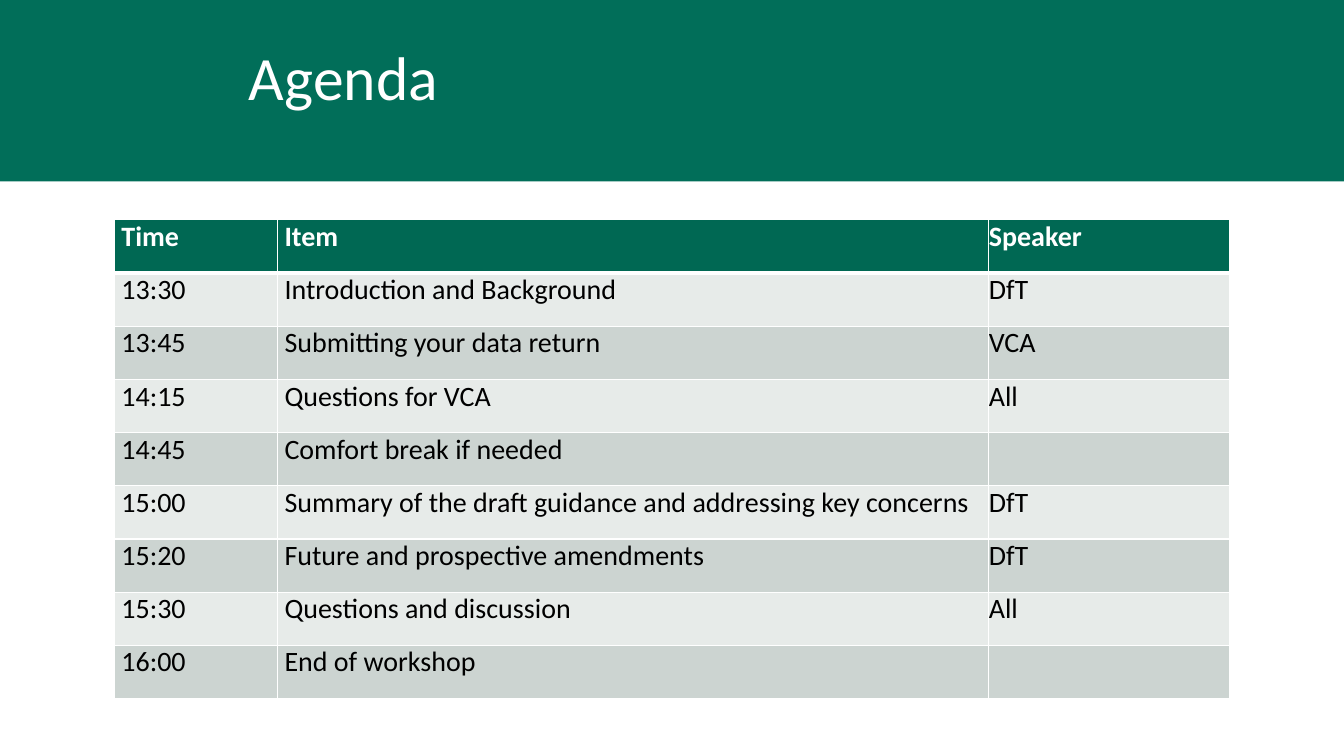
from lxml.etree import SubElement
from pptx import Presentation
from pptx.dml.color import RGBColor
from pptx.enum.shapes import MSO_SHAPE
from pptx.enum.text import MSO_ANCHOR
from pptx.oxml.ns import qn
from pptx.util import Cm, Pt

HEAD = "Agenda"
ROWS = [
    ("Time", "Item", "Speaker"),
    ("13:30", "Introduction and Background", "DfT"),
    ("13:45", "Submitting your data return", "VCA"),
    ("14:15", "Questions for VCA", "All"),
    ("14:45", "Comfort break if needed", ""),
    ("15:00", "Summary of the draft guidance and addressing key concerns", "DfT"),
    ("15:20", "Future and prospective amendments", "DfT"),
    ("15:30", "Questions and discussion", "All"),
    ("16:00", "End of workshop", ""),
]
WIDTHS = [4.11, 17.93, 6.07]
PADS = [0.18, 0.18, 0]
ROW_H = 1.34
FONT, WHITE, BLACK = "Calibri", "FFFFFF", "000000"
BAND, TOP, LIGHT, DARK = "016E59", "006853", "E7EBE9", "CCD4D1"


def paint(fill, color):
    fill.solid()
    fill.fore_color.rgb = RGBColor.from_string(color)


def style(para, size, color, bold=False):
    font = para.font
    font.name, font.size, font.bold = FONT, Pt(size), bold
    font.color.rgb = RGBColor.from_string(color)


def edge(cell, row):
    """Draw white cell borders, thicker below the header row."""
    props = cell._tc.get_or_add_tcPr()
    for i, side in enumerate(("lnL", "lnR", "lnT", "lnB")):
        thick = (row, side) in ((0, "lnB"), (1, "lnT"))
        line = props.makeelement(qn("a:" + side), {"w": str(Pt(3 if thick else 1))})
        fill = SubElement(line, qn("a:solidFill"))
        SubElement(fill, qn("a:srgbClr"), val=WHITE)
        props.insert(i, line)


def add_band(slide, width):
    band = slide.shapes.add_shape(MSO_SHAPE.RECTANGLE, 0, 0, width, Cm(4.57))
    band.shadow.inherit = False
    paint(band.fill, BAND)
    band.line.fill.background()
    slide.shapes._spTree.insert(2, band._element)


def add_title(slide):
    title = slide.shapes.title
    title.left, title.top, title.width, title.height = Cm(6.02), Cm(1.07), Cm(6.86), Cm(2.29)
    frame = title.text_frame
    frame.text = HEAD
    frame.vertical_anchor = MSO_ANCHOR.TOP
    para = frame.paragraphs[0]
    para.line_spacing = 0.9
    para.alignment = 1
    style(para, 44, WHITE)


def add_agenda(slide):
    table = slide.shapes.add_table(
        len(ROWS), len(WIDTHS), Cm(2.88), Cm(5.54),
        Cm(sum(WIDTHS)), Cm(ROW_H * len(ROWS))).table
    for col, width in zip(table.columns, WIDTHS):
        col.width = Cm(width)
    for r, texts in enumerate(ROWS):
        table.rows[r].height = Cm(ROW_H)
        color = TOP if r == 0 else LIGHT if r % 2 else DARK
        for c, text in enumerate(texts):
            cell = table.cell(r, c)
            cell.text = text
            cell.margin_left = cell.margin_right = Cm(PADS[c])
            cell.margin_top = cell.margin_bottom = 0
            paint(cell.fill, color)
            edge(cell, r)
            style(cell.text_frame.paragraphs[0], 20, BLACK if r else WHITE, r == 0)


def main():
    deck = Presentation()
    deck.slide_width, deck.slide_height = Cm(33.87), Cm(19.05)
    slide = deck.slides.add_slide(deck.slide_layouts[5])
    add_band(slide, deck.slide_width)
    add_title(slide)
    add_agenda(slide)
    deck.save("out.pptx")


if __name__ == "__main__":
    main()
